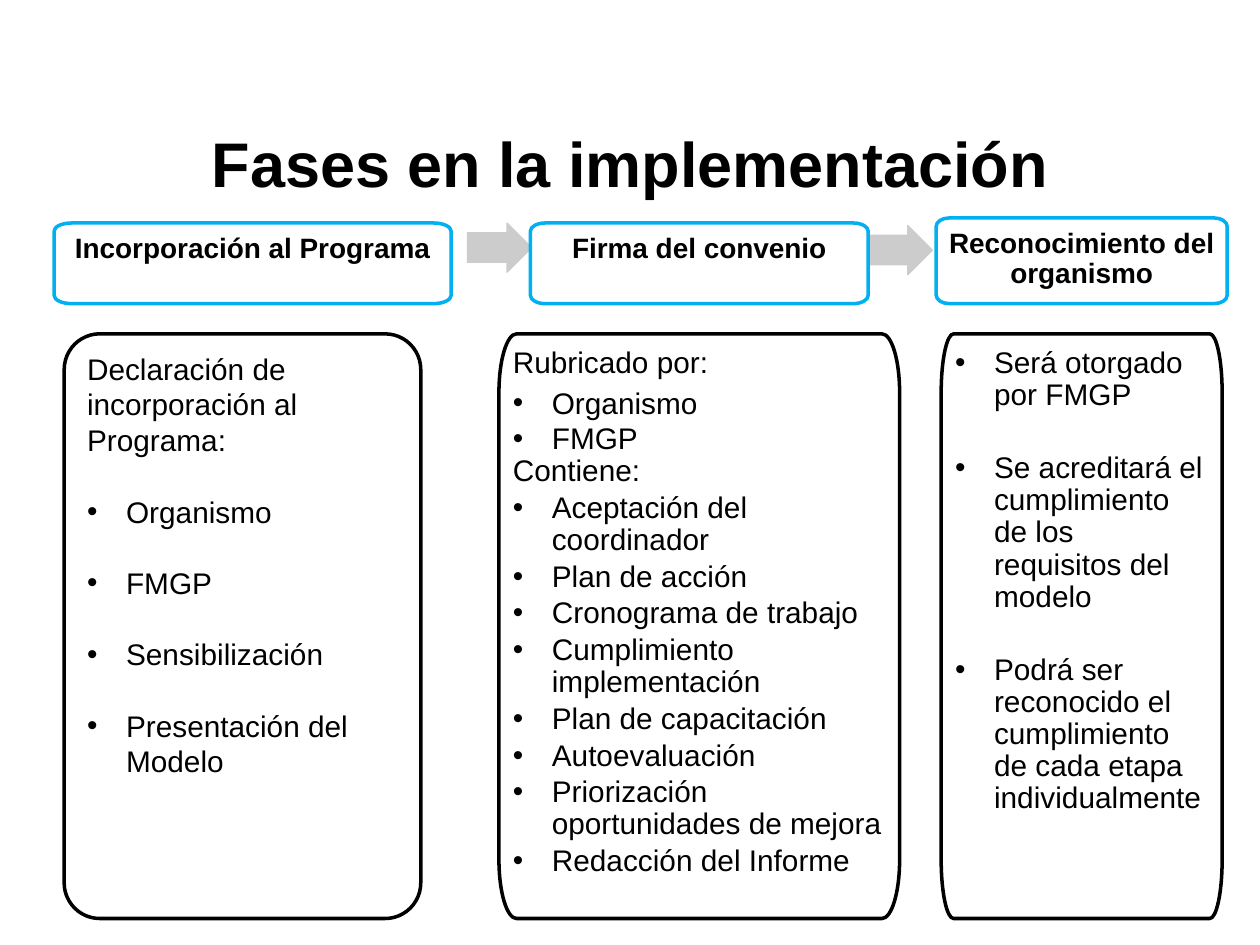
import lxml.etree
import pptx
import pptx.dml.color
import pptx.enum.shapes
import pptx.enum.text
import pptx.oxml.ns
import pptx.util

Inches = pptx.util.Inches
Pt = pptx.util.Pt
qn = pptx.oxml.ns.qn
CENTER = pptx.enum.text.PP_ALIGN.CENTER
LEFT = pptx.enum.text.PP_ALIGN.LEFT
TOP = pptx.enum.text.MSO_ANCHOR.TOP
MIDDLE = pptx.enum.text.MSO_ANCHOR.MIDDLE
PRESET = pptx.enum.shapes.MSO_SHAPE

TITLE = ("Fases en la implementación", (0.75, 0.66, 8.5, 1.25))
PHASES = [
    ("Reconocimiento del organismo", (7.43, 1.73, 2.31, 0.68)),
    ("Firma del convenio", (4.21, 1.77, 2.68, 0.64)),
    ("Incorporación al Programa", (0.43, 1.77, 3.15, 0.64)),
]
ARROWS = [(6.89, 1.79), (3.71, 1.77)]

BODY = {"line_spacing": 0.9, "space_after": Pt(2.6)}
SINGLE = {"line_spacing": 1.0}
SPACED = {"line_spacing": 1.0, "space_before": Pt(20.4)}
APART = {"line_spacing": 0.9, "space_after": Pt(23.4)}

INCORPORATION = [
    ("Declaración de incorporación al Programa:", False, SINGLE),
    ("Organismo", True, SPACED),
    ("FMGP", True, SPACED),
    ("Sensibilización", True, SPACED),
    ("Presentación del Modelo", True, SPACED),
]
AGREEMENT = [
    ("Rubricado por:", False, BODY),
    ("Organismo", True, SINGLE),
    ("FMGP", True, SINGLE),
    ("Contiene:", False, BODY),
    ("Aceptación del coordinador", True, BODY),
    ("Plan de acción", True, BODY),
    ("Cronograma de trabajo", True, BODY),
    ("Cumplimiento implementación", True, BODY),
    ("Plan de capacitación", True, BODY),
    ("Autoevaluación", True, BODY),
    ("Priorización oportunidades de mejora", True, BODY),
    ("Redacción del Informe", True, BODY),
]
RECOGNITION = [
    ("Será otorgado por FMGP", True, APART),
    ("Se acreditará el cumplimiento de los requisitos del modelo", True, APART),
    ("Podrá ser reconocido el cumplimiento de cada etapa individualmente", True, BODY),
]
PANEL_TOP, PANEL_HEIGHT = 2.65, 4.64
INDENT = 0.31
ROUNDING = 0.55


def color(code):
    return pptx.dml.color.RGBColor.from_string(code)


def apply(target, values):
    for name, value in values.items():
        setattr(target, name, value)


def paint(part, fill, line, width, alpha=None):
    part.shadow.inherit = False
    part.fill.solid()
    part.fill.fore_color.rgb = color(fill)
    part.line.color.rgb = color(line)
    part.line.width = Pt(width)
    if alpha:
        tint = part.fill._xPr.find(".//" + qn("a:srgbClr"))
        lxml.etree.SubElement(tint, qn("a:alpha"), val=str(alpha * 1000))


def write(part, lines, size, bold=False, align=LEFT, anchor=TOP, insets=(0.1, 0.05, 0.1, 0.05)):
    frame = part.text_frame
    sides = ("margin_left", "margin_top", "margin_right", "margin_bottom")
    apply(frame, {"word_wrap": True, "vertical_anchor": anchor})
    apply(frame, {side: Inches(inset) for side, inset in zip(sides, insets)})
    for number, (text, bullet, spacing) in enumerate(lines):
        paragraph = frame.add_paragraph() if number else frame.paragraphs[0]
        apply(paragraph, {"alignment": align, **spacing})
        run = paragraph.add_run()
        run.text = text
        apply(run.font, {"name": "Arial", "size": Pt(size), "bold": bold})
        run.font.color.rgb = color("000000")
        if bullet:
            properties = paragraph._p.get_or_add_pPr()
            properties.set("marL", str(Inches(INDENT)))
            properties.set("indent", str(Inches(-INDENT)))
            lxml.etree.SubElement(properties, qn("a:buFont"), typeface="Arial")
            lxml.etree.SubElement(properties, qn("a:buChar"), char="•")


def toward(start, corner):
    return tuple(round(a + (c - a) * ROUNDING) for a, c in zip(start, corner))


def stretched_box(shapes, box):
    left, top, width, height = map(Inches, box)
    right, bottom = left + width, top + height
    rx, ry = round(0.044 * width), round(0.1 * height)
    outline = [
        (left, top + ry), (left + rx, top),
        (right - rx, top), (right, top + ry),
        (right, bottom - ry), (right - rx, bottom),
        (left + rx, bottom), (left, bottom - ry),
    ]
    builder = shapes.build_freeform(*outline[0])
    builder.add_line_segments(outline[1:], close=True)
    shape = builder.convert_to_shape()

    segments = shape._element.findall(".//" + qn("a:lnTo"))
    for index in range(0, 8, 2):
        start, end = outline[index:index + 2]
        corner = (start[0], end[1]) if index % 4 == 0 else (end[0], start[1])
        curve = segments[index]
        bend = lxml.etree.Element(qn("a:cubicBezTo"))
        for x, y in (toward(start, corner), toward(end, corner), end):
            lxml.etree.SubElement(bend, qn("a:pt"), x=str(x - left), y=str(y - top))
        curve.getparent().replace(curve, bend)
    return shape


def main():
    deck = pptx.Presentation()
    apply(deck, {"slide_width": Inches(10), "slide_height": Inches(7.5)})
    shapes = deck.slides.add_slide(deck.slide_layouts[6]).shapes

    text, box = TITLE
    title = shapes.add_textbox(*map(Inches, box))
    write(title, [(text, False, {})], 36, True, CENTER, MIDDLE)

    for left, top in ARROWS:
        arrow = shapes.add_shape(PRESET.RIGHT_ARROW, *map(Inches, (left, top, 0.51, 0.39)))
        arrow.adjustments[0], arrow.adjustments[1] = 0.6, 0.5
        paint(arrow, "CCCCCC", "CCCCCC", 0.75)

    for text, box in PHASES:
        phase = stretched_box(shapes, box)
        paint(phase, "FFFFFF", "00B0F0", 2)
        write(phase, [(text, False, {"line_spacing": 0.9})], 16, True, CENTER,
              insets=(0.09, 0.09, 0.09, 0.27))

    first = shapes.add_shape(PRESET.ROUNDED_RECTANGLE,
                             *map(Inches, (0.51, PANEL_TOP, 2.83, PANEL_HEIGHT)))
    first.adjustments[0] = 0.1
    paint(first, "FFFFFF", "000000", 2, 90)
    write(first, INCORPORATION, 17)

    for left, width, lines in [(3.96, 3.18, AGREEMENT), (7.47, 2.23, RECOGNITION)]:
        panel = stretched_box(shapes, (left, PANEL_TOP, width, PANEL_HEIGHT))
        paint(panel, "FFFFFF", "000000", 2, 90)
        write(panel, lines, 17, insets=(0.11,) * 4)

    deck.save("out.pptx")


if __name__ == "__main__":
    main()
